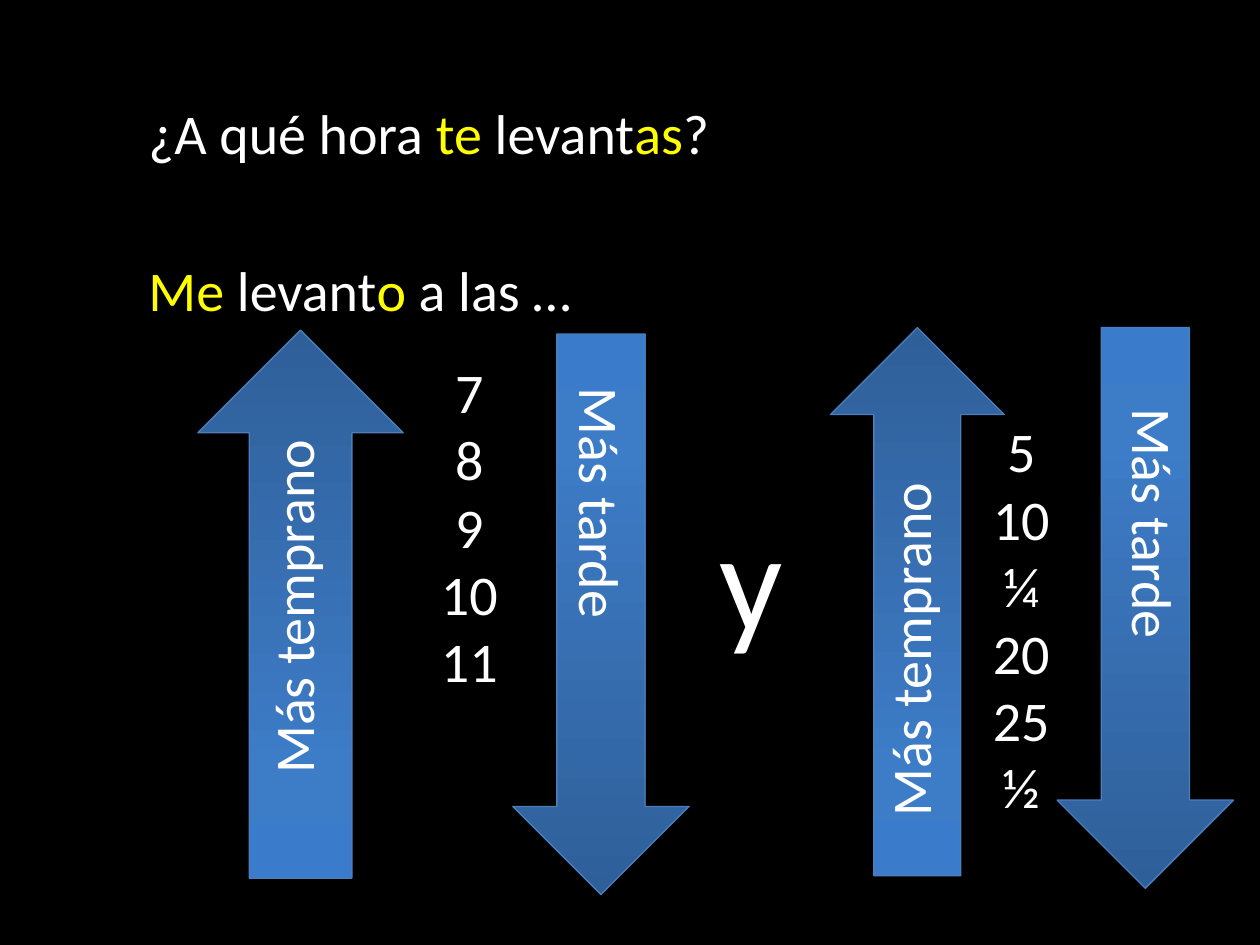
import copy

from pptx import Presentation
from pptx.dml.color import RGBColor
from pptx.enum import shapes, text
from pptx.util import Inches, Pt

BLACK = RGBColor(0x00, 0x00, 0x00)
WHITE = RGBColor(0xFF, 0xFF, 0xFF)
YELLOW = RGBColor(0xFF, 0xFF, 0x00)
ARROW_LINE = RGBColor(0x4B, 0x7E, 0xBC)
ARROW_STOPS = [
    (0, RGBColor(0x2F, 0x5F, 0x99)),
    (0.8, RGBColor(0x3D, 0x7C, 0xC7)),
    (1, RGBColor(0x3A, 0x7C, 0xCB)),
]
FONT = "Calibri"
LINE_HEIGHT = 0.64
LABEL_WIDTH = 3.04
COLUMN_WIDTH = 1.41

UP, DOWN = 180, 0
EARLIER, LATER = ("Más temprano", 270), ("Más tarde", 90)


def add_text(slide, box, lines, size=32, align=None, rotation=0):
    """Add a text box; each line is a list of (words, colour) runs."""
    holder = slide.shapes.add_textbox(*map(Inches, box))
    holder.rotation = rotation
    frame = holder.text_frame
    frame.word_wrap = True
    frame.auto_size = text.MSO_AUTO_SIZE.SHAPE_TO_FIT_TEXT
    for index, line in enumerate(lines):
        paragraph = frame.paragraphs[0] if index == 0 else frame.add_paragraph()
        paragraph.alignment = align
        for words, colour in line:
            run = paragraph.add_run()
            run.text = words
            for name, value in {"name": FONT, "size": Pt(size)}.items():
                setattr(run.font, name, value)
            run.font.color.rgb = colour


def add_sentence(slide, top, runs):
    add_text(slide, (1.08, top, 7.27, LINE_HEIGHT), [runs])


def add_numbers(slide, left, top, height, numbers):
    add_text(slide, (left, top, COLUMN_WIDTH, height),
             [[(number, WHITE)] for number in numbers],
             align=text.PP_ALIGN.CENTER)


def add_arrow(slide, box, direction):
    arrow = slide.shapes.add_shape(shapes.MSO_SHAPE.DOWN_ARROW,
                                   *map(Inches, box))
    arrow.rotation = direction
    arrow.shadow.inherit = False
    arrow.line.color.rgb = ARROW_LINE
    arrow.line.width = Pt(0.75)
    arrow.fill.gradient()
    arrow.fill.gradient_angle = 90
    first_stop = arrow.fill._fill._gradFill.gsLst[0]
    first_stop.addnext(copy.deepcopy(first_stop))
    for stop, (position, colour) in zip(arrow.fill.gradient_stops, ARROW_STOPS):
        stop.position = position
        stop.color.rgb = colour


def add_arrow_label(slide, left, top, label):
    words, rotation = label
    add_text(slide, (left, top, LABEL_WIDTH, LINE_HEIGHT), [[(words, WHITE)]],
             align=text.PP_ALIGN.JUSTIFY, rotation=rotation)


def main():
    deck = Presentation()
    deck.slide_width, deck.slide_height = Inches(10), Inches(7.5)
    slide = deck.slides.add_slide(deck.slide_layouts[6])
    slide.background.fill.solid()
    slide.background.fill.fore_color.rgb = BLACK

    add_sentence(slide, 0.73, [("¿A qué hora ", WHITE), ("te", YELLOW),
                               (" levant", WHITE), ("as", YELLOW), ("?", WHITE)])
    add_sentence(slide, 1.98, [("Me", YELLOW), (" levant", WHITE),
                               ("o", YELLOW), (" a las …", WHITE)])

    add_numbers(slide, 3.02, 2.79, 2.79, ["7", "8", "9", "10", "11"])
    add_numbers(slide, 7.4, 3.26, 3.33, ["5", "10", "¼", "20", "25", "½"])

    add_arrow(slide, (1.57, 2.62, 1.63, 4.35), UP)
    add_arrow(slide, (4.07, 2.65, 1.4, 4.45), DOWN)
    add_arrow_label(slide, 3.25, 4.18, LATER)
    add_arrow_label(slide, 0.8, 4.4, EARLIER)

    add_arrow(slide, (6.59, 2.6, 1.38, 4.35), UP)
    add_arrow_label(slide, 5.7, 4.74, EARLIER)
    add_arrow(slide, (8.39, 2.6, 1.4, 4.45), DOWN)
    add_arrow_label(slide, 7.64, 4.34, LATER)

    add_text(slide, (5.61, 3.85, 0.86, 1.45), [[("y", WHITE)]], size=80)

    deck.save("out.pptx")


if __name__ == "__main__":
    main()
